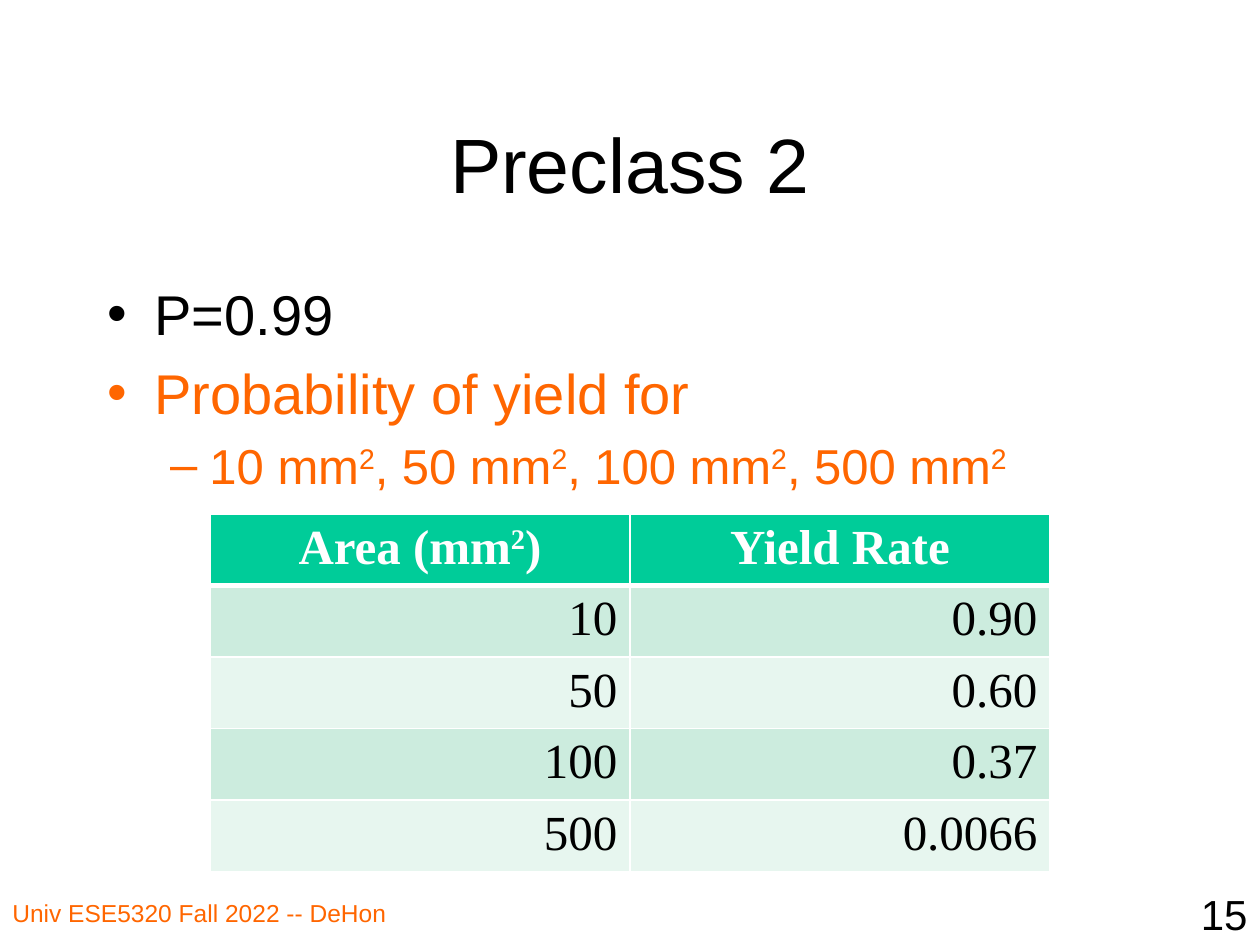
from lxml import etree
from pptx import Presentation
from pptx.dml.color import RGBColor
from pptx.enum.text import MSO_ANCHOR, MSO_AUTO_SIZE, PP_ALIGN
from pptx.oxml.ns import qn
from pptx.util import Inches, Pt

LEFT, CENTER, RIGHT = PP_ALIGN.LEFT, PP_ALIGN.CENTER, PP_ALIGN.RIGHT
BLACK = RGBColor(0x00, 0x00, 0x00)
WHITE = RGBColor(0xFF, 0xFF, 0xFF)
ORANGE = RGBColor(0xFF, 0x66, 0x00)
GREEN = RGBColor(0x00, 0xCC, 0x99)
BANDS = [RGBColor(0xE7, 0xF6, 0xEF), RGBColor(0xCC, 0xEC, 0xDE)]


def write(p, text, size, color, font="Arial", bold=False):
    for i, part in enumerate(text.split("^")):
        pieces = [part] if i == 0 else [part[0], part[1:]]
        for j, piece in enumerate(pieces):
            if not piece:
                continue
            r = p.add_run()
            r.text = piece
            r.font.name = font
            r.font.size = Pt(size)
            r.font.bold = bold
            r.font.color.rgb = color
            if i and j == 0:
                r.font._element.set("baseline", "30000")


def border(cell, side, width):
    ln = etree.SubElement(cell._tc.get_or_add_tcPr(), qn(f"a:ln{side}"), w=str(Pt(width)))
    fill = etree.SubElement(ln, qn("a:solidFill"))
    etree.SubElement(fill, qn("a:srgbClr"), val=str(WHITE))


prs = Presentation()
prs.slide_width, prs.slide_height = Inches(10), Inches(7.5)
W, H = prs.slide_width, prs.slide_height
s = prs.slides.add_slide(prs.slide_layouts[1])

title, body = s.placeholders
for sp, top, height in [(title, 0.67, 1.25), (body, 2.17, 4.5)]:
    sp.left, sp.top = Inches(0.75), Inches(top)
    sp.width, sp.height = Inches(8.5), Inches(height)
    sp.text_frame.auto_size = MSO_AUTO_SIZE.NONE
title.text_frame.vertical_anchor = MSO_ANCHOR.MIDDLE
p = title.text_frame.paragraphs[0]
p.alignment = CENTER
write(p, "Preclass 2", 44, BLACK)

bullets = [
    ("P=0.99", 0, 32, BLACK),
    ("Probability of yield for", 0, 32, ORANGE),
    ("10 mm^2, 50 mm^2, 100 mm^2, 500 mm^2", 1, 28, ORANGE),
]
tf = body.text_frame
for i, (text, level, size, color) in enumerate(bullets):
    p = tf.paragraphs[0] if i == 0 else tf.add_paragraph()
    p.level = level
    write(p, text, size, color)

footers = [
    ("Univ ESE5320 Fall 2022 -- DeHon", 0, 7.08, 3.83, 14, ORANGE, LEFT),
    ("15", 7.92, 7, 2.08, 24, BLACK, RIGHT),
]
for text, left, top, width, size, color, align in footers:
    sp = s.shapes.add_textbox(Inches(left), Inches(top), Inches(width), H - Inches(top))
    tf = sp.text_frame
    tf.word_wrap = True
    p = tf.paragraphs[0]
    p.alignment = align
    write(p, text, size, color)

rows = [
    ("Area (mm^2)", "Yield Rate"),
    ("10", "0.90"),
    ("50", "0.60"),
    ("100", "0.37"),
    ("500", "0.0066"),
]
row_height = Inches(0.53)
table = s.shapes.add_table(
    len(rows), 2, W // 6, Inches(4.08), W * 2 // 3, row_height * len(rows)
).table
for i, row in enumerate(rows):
    table.rows[i].height = row_height
    header = i == 0
    for j, text in enumerate(row):
        cell = table.cell(i, j)
        for side in "LRTB":
            heavy = (i, side) in [(0, "B"), (1, "T")]
            border(cell, side, 3 if heavy else 1)
        cell.fill.solid()
        cell.fill.fore_color.rgb = GREEN if header else BANDS[i % 2]
        p = cell.text_frame.paragraphs[0]
        p.alignment = CENTER if header else RIGHT
        write(p, text, 28, WHITE if header else BLACK, "Times New Roman", header)

prs.save("out.pptx")
